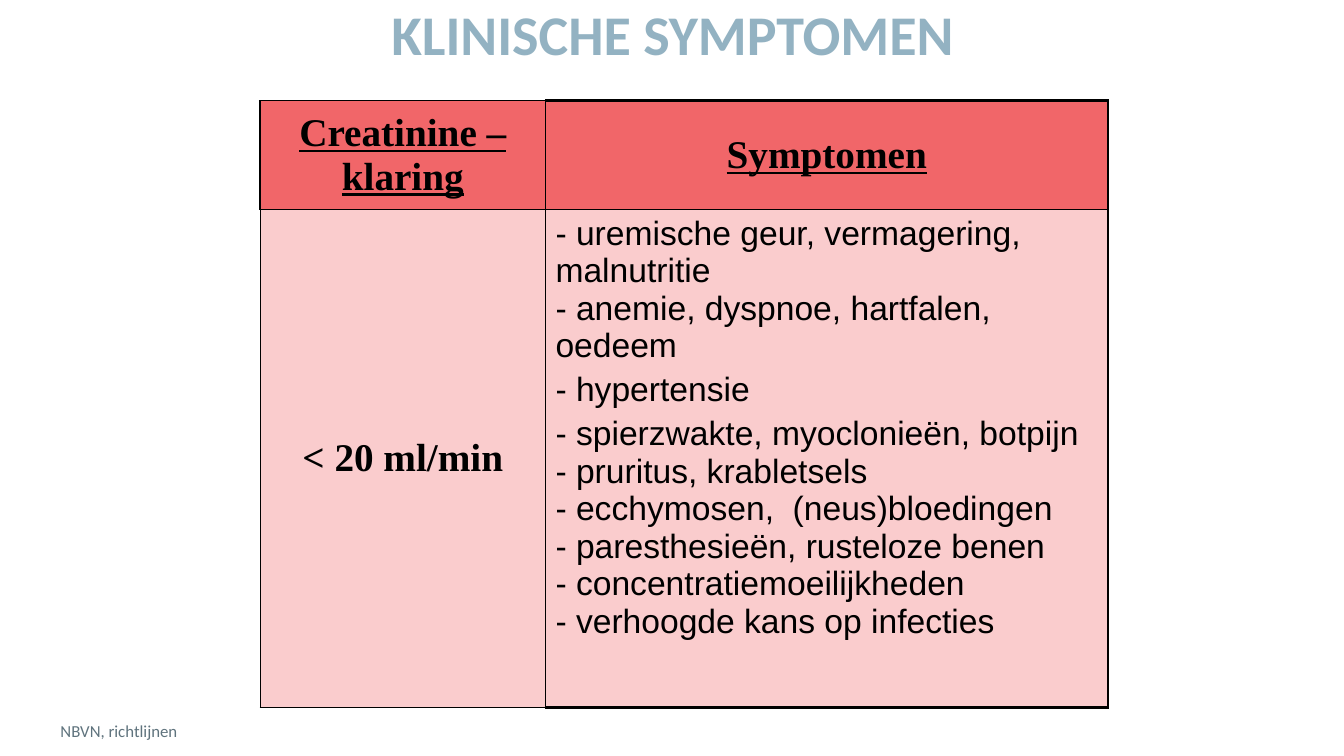
from lxml.etree import SubElement
from pptx import Presentation
from pptx.dml.color import RGBColor
from pptx.enum.text import MSO_ANCHOR, PP_ALIGN
from pptx.oxml.ns import qn
from pptx.util import Inches, Pt

WIDE, HIGH = 13.33, 7.5
COLS, ROWS = 133.3, 75
SERIF = dict(font="Times New Roman", size=28, bold=True, align=PP_ALIGN.CENTER, gap=0.2)
SANS = dict(font="Arial", size=24, gap=0.2)
HEAD, BODY = "F16669", "FACCCD"
THIN, THICK = 1, 2.25

SIGNS = [
    "- uremische geur, vermagering, malnutritie \v- anemie, dyspnoe, hartfalen, oedeem",
    "- hypertensie",
    "- spierzwakte, myoclonieën, botpijn \v- pruritus, krabletsels \v"
    "- ecchymosen,  (neus)bloedingen \v- paresthesieën, rusteloze benen \v"
    "- concentratiemoeilijkheden \v- verhoogde kans op infecties",
]


def tint(code):
    return RGBColor.from_string(code)


def col(count):
    return Inches(WIDE * count / COLS)


def row(count):
    return Inches(HIGH * count / ROWS)


def write(frame, lines, font="Calibri", size=12, color="000000", bold=False,
          under=False, align=PP_ALIGN.LEFT, gap=0):
    for spot, line in enumerate(lines):
        para = frame.add_paragraph() if spot else frame.paragraphs[0]
        para.text = line
        para.alignment = align
        para.space_before = Pt(gap * size)
        for run in para.runs:
            face = run.font
            face.name, face.size = font, Pt(size)
            face.bold, face.underline = bold, under
            face.color.rgb = tint(color)


def label(slide, area, text, anchor, **style):
    left, top, width, height = area
    frame = slide.shapes.add_textbox(col(left), row(top), col(width), row(height)).text_frame
    frame.word_wrap = True
    frame.vertical_anchor = anchor
    frame.margin_left = frame.margin_right = frame.margin_top = frame.margin_bottom = 0
    write(frame, [text], **style)


def edge(cell, widths):
    props = cell._tc.get_or_add_tcPr()
    for side, width in zip("LRTB", widths):
        line = SubElement(props, qn(f"a:ln{side}"), w=str(Pt(width)))
        fill = SubElement(line, qn("a:solidFill"))
        SubElement(fill, qn("a:srgbClr"), val="000000")


def paint(cell, lines, fill, widths, anchor=MSO_ANCHOR.MIDDLE, **style):
    edge(cell, widths)
    cell.fill.solid()
    cell.fill.fore_color.rgb = tint(fill)
    cell.vertical_anchor = anchor
    write(cell.text_frame, lines, **style)


def chart(slide):
    wide, high = (28.3, 55.8), (10.8, 49.4)
    grid = slide.shapes.add_table(2, 2, col(25.8), row(10), col(sum(wide)), row(sum(high))).table
    for spot in range(2):
        grid.columns[spot].width = col(wide[spot])
        grid.rows[spot].height = row(high[spot])
    paint(grid.cell(0, 0), ["Creatinine – klaring"], HEAD,
          (THICK, THIN, THIN, THIN), under=True, **SERIF)
    paint(grid.cell(0, 1), ["Symptomen"], HEAD,
          (THIN, THICK, THICK, THIN), under=True, **SERIF)
    paint(grid.cell(1, 0), ["< 20 ml/min"], BODY, (THIN,) * 4, **SERIF)
    paint(grid.cell(1, 1), SIGNS, BODY,
          (THIN, THICK, THIN, THICK), MSO_ANCHOR.TOP, **SANS)


def main():
    deck = Presentation()
    deck.slide_width, deck.slide_height = Inches(WIDE), Inches(HIGH)
    slide = deck.slides.add_slide(deck.slide_layouts[6])
    label(slide, (6, 69.5, 88.5, 4), "NBVN, richtlijnen", MSO_ANCHOR.BOTTOM, color="5F737D")
    label(slide, (24.2, 0, 85, 12.5), "KLINISCHE SYMPTOMEN", MSO_ANCHOR.TOP,
          size=40, color="93B2C2", bold=True, align=PP_ALIGN.CENTER)
    chart(slide)
    deck.save("out.pptx")


if __name__ == "__main__":
    main()
